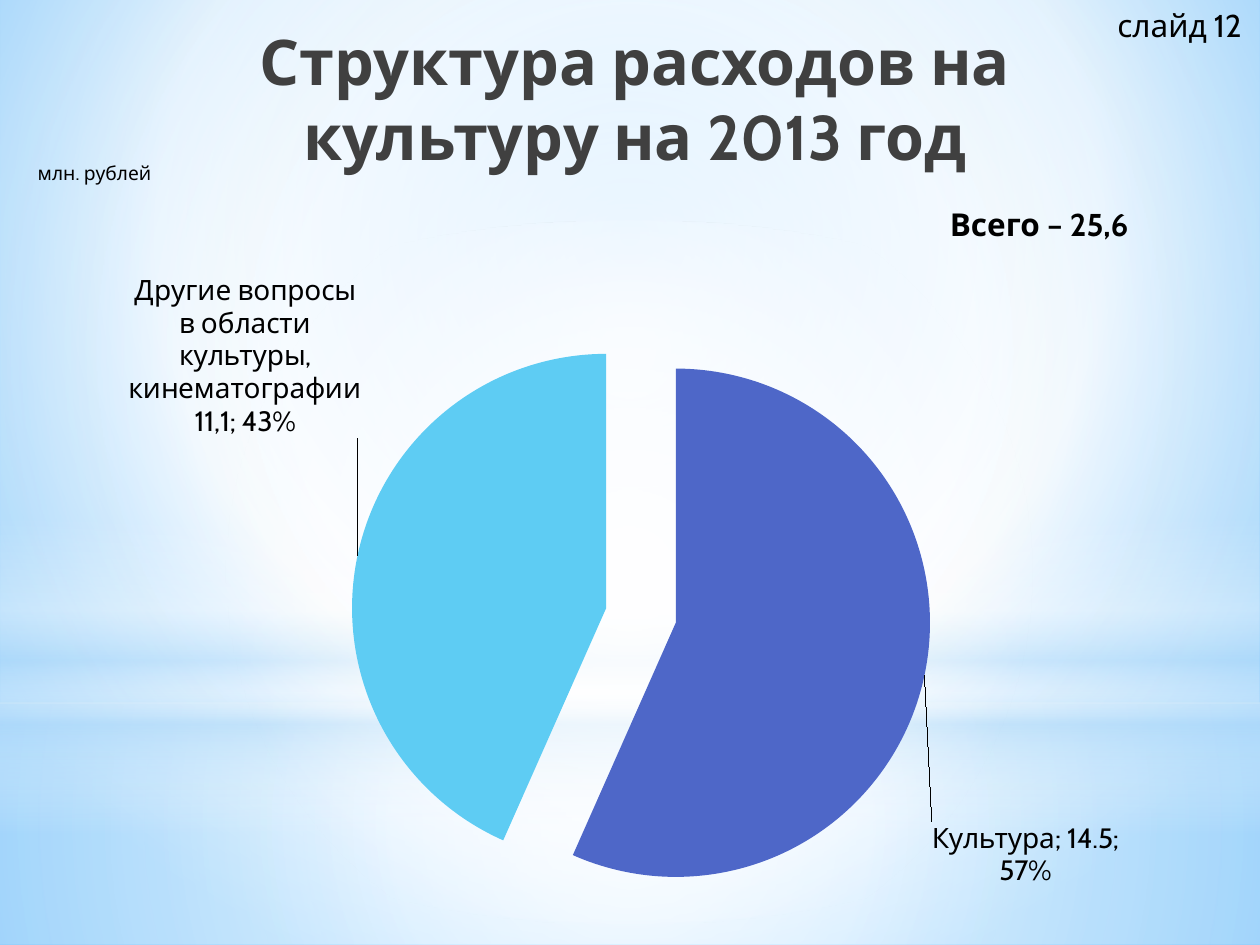
"""Build the slide showing the 2013 culture spending structure as an exploded pie."""
import pptx
import pptx.chart.data
import pptx.dml.color
import pptx.enum.chart
import pptx.enum.shapes
import pptx.enum.text
import pptx.oxml
import pptx.oxml.ns
import pptx.util

Inches, Pt = pptx.util.Inches, pptx.util.Pt
CENTER = (50, 50, 50, 50)


def color(text):
    return pptx.dml.color.RGBColor.from_string(text)


def set_gradient(gradient, stops, focus):
    stop_xml = "".join(
        f'<a:gs pos="{position * 1000}"><a:srgbClr val="{value}">'
        f'<a:alpha val="{alpha * 1000}"/></a:srgbClr></a:gs>'
        for position, value, alpha in stops)
    direction = '<a:lin ang="5400000" scaled="0"/>'
    if focus:
        left, top, right, bottom = (side * 1000 for side in focus)
        direction = (f'<a:path path="circle"><a:fillToRect l="{left}" t="{top}" '
                     f'r="{right}" b="{bottom}"/></a:path>')
    source = pptx.oxml.parse_xml(
        f'<a:gradFill {pptx.oxml.ns.nsdecls("a")}><a:gsLst>{stop_xml}</a:gsLst>{direction}</a:gradFill>')
    gradient[:] = list(source)


presentation = pptx.Presentation()
presentation.slide_width = Inches(10)
presentation.slide_height = Inches(7.5)
slide = presentation.slides.add_slide(presentation.slide_layouts[5])
shapes = slide.shapes

slide.background.fill.gradient()
set_gradient(slide._element.xpath(".//p:bgPr/a:gradFill")[0],
             [(0, "9ED5FF", 100), (60, "FFFFFF", 100), (100, "5BB9FF", 100)],
             (20, 10, 20, 60))

rectangle = pptx.enum.shapes.MSO_SHAPE.RECTANGLE
oval = pptx.enum.shapes.MSO_SHAPE.OVAL
glows = [
    (rectangle, 5.58, 1.92, CENTER,
     [(0, "FFFFFF", 91), (37, "FFFFFF", 76), (100, "B4DCFA", 79)]),
    (rectangle, 0, 5.58, CENTER,
     [(0, "FFFFFF", 89), (48, "FFFFFF", 62), (100, "B4DCFA", 79)]),
    (rectangle, 4.12, 2.5, None,
     [(0, "FFFFFF", 0), (29, "FFFFFF", 30), (45, "B4DCFA", 40),
      (55, "FFFFFF", 26), (65, "B4DCFA", 60), (100, "FFFFFF", 0)]),
    (oval, 1.75, 5.58, CENTER, [(0, "FFFFFF", 100), (56, "FFFFFF", 0)]),
]
for kind, top, height, focus, stops in glows:
    glow = shapes.add_shape(kind, 0, Inches(top), presentation.slide_width, Inches(height))
    glow.shadow.inherit = False
    glow.line.fill.background()
    glow.fill.gradient()
    set_gradient(glow._element.spPr.find(pptx.oxml.ns.qn("a:gradFill")), stops, focus)

title = shapes.title
shapes._spTree.append(title._element)
title.left, title.top, title.width, title.height = map(Inches, (0.75, 0.15, 8.58, 1.25))
title.text_frame.text = "Структура расходов на культуру на 2013 год"
title.text_frame.vertical_anchor = pptx.enum.text.MSO_ANCHOR.MIDDLE
title.text_frame.paragraphs[0].alignment = pptx.enum.text.PP_ALIGN.CENTER
title_font = title.text_frame.paragraphs[0].runs[0].font
title_font.name, title_font.size, title_font.bold = "Cabin", Pt(36), True
title_font.color.rgb = color("404040")

data = pptx.chart.data.CategoryChartData()
data.categories = ["Культура", "Другие вопросы в области культуры, кинематографии"]
data.add_series("Series 1", (14.5, 11.1))
chart = shapes.add_chart(pptx.enum.chart.XL_CHART_TYPE.PIE, Inches(0.35), Inches(1.55),
                         Inches(9.29), Inches(5.75), data).chart
chart.has_title = False
chart.has_legend = False
chart.font.name, chart.font.size = "Cabin", Pt(18)
chart.font.color.rgb = color("000000")
plot = chart.plots[0]
plot.vary_by_categories = True
series = plot.series[0]

labels = series.data_labels
labels.font.size = Pt(16)
labels.font.name = "Cabin"
labels.show_value = labels.show_percentage = labels.show_category_name = True
labels.position = pptx.enum.chart.XL_LABEL_POSITION.OUTSIDE_END

layout_xml = "<c:layout {}><c:manualLayout>{}</c:manualLayout></c:layout>"
namespace = pptx.oxml.ns.nsdecls("c")
slices = [("4E67C8", 0, 0.2, ""),
          ("5ECCF3", 0.01, -0.16, "Другие вопросы в области культуры, кинематографии 11,1; 43%")]
for index, (fill, shift_x, shift_y, wording) in enumerate(slices):
    point = series.points[index]
    point.format.fill.solid()
    point.format.fill.fore_color.rgb = color(fill)
    label = point.data_label
    if wording:
        label.text_frame.text = wording
        font = label.text_frame.paragraphs[0].runs[0].font
    else:
        font = label.font
    font.name, font.size = "Cabin", Pt(16)
    font.color.rgb = color("000000")
    label.position = pptx.enum.chart.XL_LABEL_POSITION.OUTSIDE_END
    element = series._element.xpath(f'c:dLbls/c:dLbl[c:idx/@val="{index}"]')[0]
    for old_layout in element.xpath("c:layout"):
        element.remove(old_layout)
    element.insert(1, pptx.oxml.parse_xml(layout_xml.format(
        namespace, f'<c:x val="{shift_x}"/><c:y val="{shift_y}"/>')))
    for flag in element.xpath("c:showVal | c:showCatName | c:showPercent"):
        flag.set("val", "1")
    element.append(pptx.oxml.parse_xml(f"<c:separator {namespace}>; </c:separator>"))

series._element.xpath("c:dPt")[0].addprevious(
    pptx.oxml.parse_xml(f'<c:explosion {namespace} val="14"/>'))

plot_area = chart._chartSpace.chart.plotArea
for old_layout in plot_area.xpath("c:layout"):
    plot_area.remove(old_layout)
plot_area.insert(0, pptx.oxml.parse_xml(layout_xml.format(
    namespace,
    '<c:layoutTarget val="inner"/><c:xMode val="edge"/><c:yMode val="edge"/>'
    '<c:x val="0.1"/><c:y val="0.18"/><c:w val="0.82"/><c:h val="0.8"/>')))

captions = [("млн. рублей", 0.2, 1.23, 1.1, 0.31, 11, False, False),
            ("Всего – 25,6", 7.44, 1.58, 2.44, 0.4, 18, True, True),
            ("слайд 12", 8.77, 0, 1.23, 0.4, 18, False, False)]
for text, left, top, width, height, size, bold, wrap in captions:
    caption = shapes.add_textbox(*map(Inches, (left, top, width, height)))
    caption.text_frame.word_wrap = wrap
    caption.text_frame.margin_right = 0
    caption.text_frame.text = text
    paragraph = caption.text_frame.paragraphs[0]
    paragraph.alignment = pptx.enum.text.PP_ALIGN.LEFT
    font = paragraph.runs[0].font
    font.name, font.size, font.bold = "Cabin", Pt(size), bold
    font.color.rgb = color("000000")

presentation.save("out.pptx")
